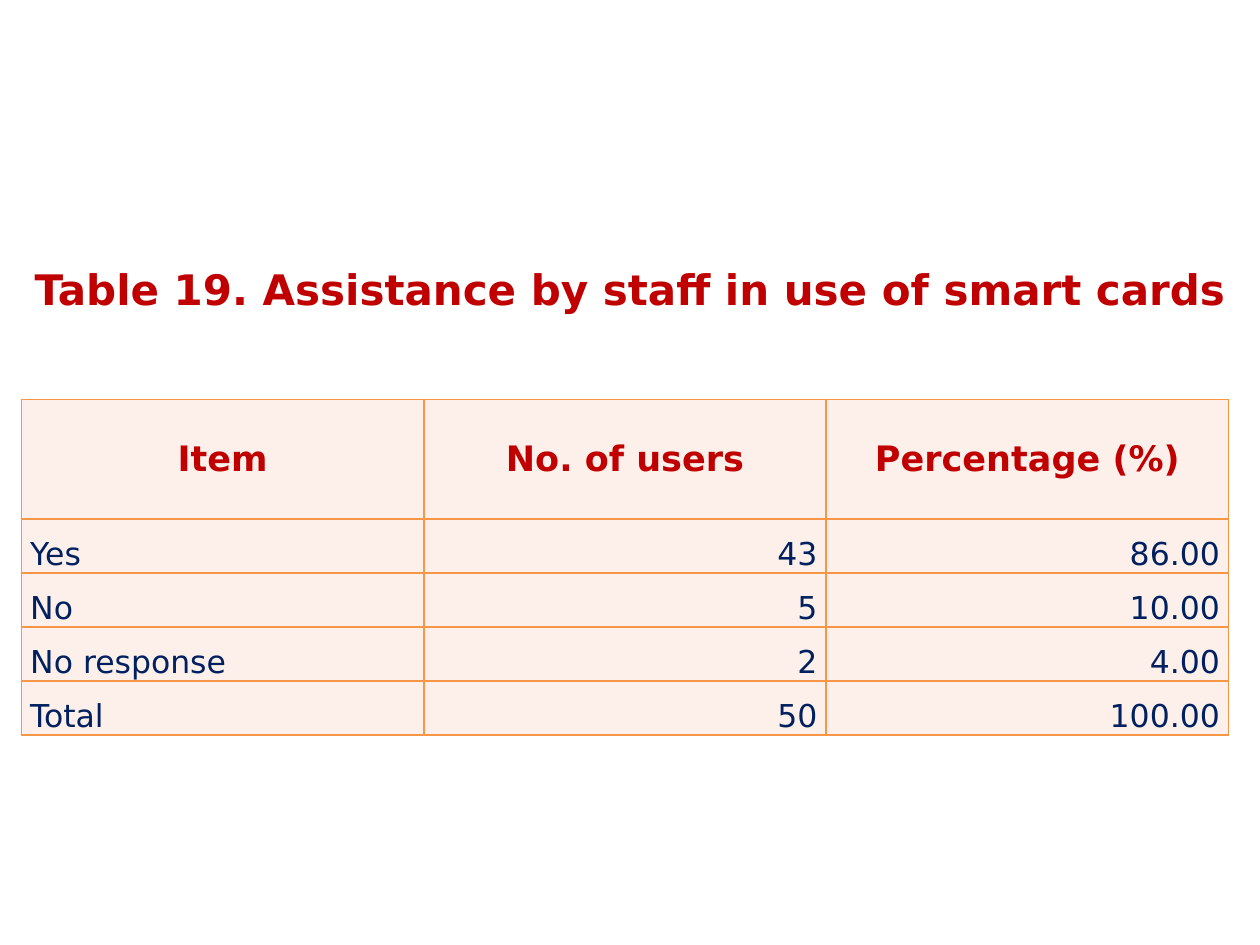
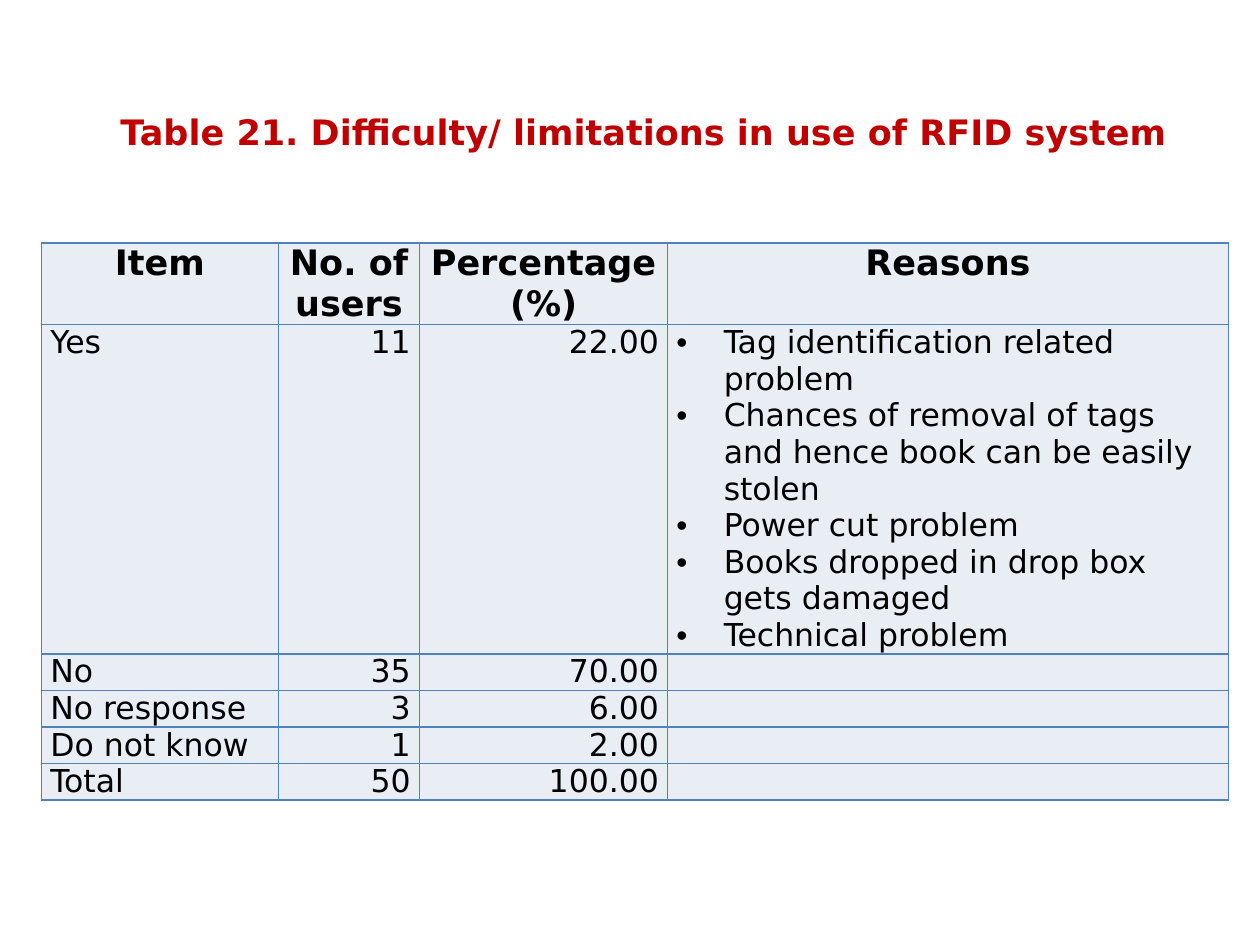
import pptx
import pptx.util
import pptx.dml.color
import pptx.enum.text
import lxml.etree
import pptx.oxml.ns

RGBColor = pptx.dml.color.RGBColor
Align = pptx.enum.text.PP_ALIGN
Anchor = pptx.enum.text.MSO_ANCHOR
Pt = pptx.util.Pt

RED = RGBColor(0xC0, 0x00, 0x00)
NAVY = RGBColor(0x00, 0x20, 0x60)
BLACK = RGBColor(0x00, 0x00, 0x00)
PEACH = RGBColor(0xFD, 0xEF, 0xE9)
ORANGE = RGBColor(0xF7, 0x96, 0x46)
MIST = RGBColor(0xE9, 0xED, 0xF4)
BLUE = RGBColor(0x4F, 0x81, 0xBD)

FONT = "DejaVu Sans"
COLS, ROWS = 100, 75
PAD = 0.7
HANG = 3.75


def apply(target, values):
    for name, value in values.items():
        setattr(target, name, value)


def add(parent, tag, **values):
    return lxml.etree.SubElement(parent, pptx.oxml.ns.qn(tag), **values)


class Deck:
    def __init__(self):
        self.file = pptx.Presentation()
        self.file.slide_width = pptx.util.Inches(10)
        self.file.slide_height = pptx.util.Inches(7.5)
        self.slide = None

    def x(self, cols):
        return round(self.file.slide_width * cols / COLS)

    def y(self, rows):
        return round(self.file.slide_height * rows / ROWS)

    def page(self):
        layout = self.file.slide_layouts[5]
        self.slide = self.file.slides.add_slide(layout)

    def label(self, para, text, size, color, bold, align):
        para.alignment = align
        run = para.add_run()
        run.text = text
        apply(run.font, {"name": FONT, "size": Pt(size), "bold": bold})
        run.font.color.rgb = color

    def title(self, text, left, top, width, height, size):
        shape = self.slide.shapes.title
        apply(shape, {"left": self.x(left), "top": self.y(top),
                      "width": self.x(width), "height": self.y(height)})
        frame = shape.text_frame
        apply(frame, {"word_wrap": False,
                      "auto_size": pptx.enum.text.MSO_AUTO_SIZE.NONE,
                      "vertical_anchor": Anchor.TOP,
                      "margin_top": self.y(PAD), "margin_bottom": 0})
        self.label(frame.paragraphs[0], text, size, RED, True, Align.CENTER)

    def bullet(self, para):
        props = para._p.get_or_add_pPr()
        props.set("marL", str(self.x(HANG)))
        props.set("indent", str(-self.x(HANG)))
        add(props, "a:buFont", typeface="Arial")
        add(props, "a:buChar", char="•")

    def border(self, cell, color):
        props = cell._tc.get_or_add_tcPr()
        for spot, side in enumerate(("a:lnL", "a:lnR", "a:lnT", "a:lnB")):
            line = lxml.etree.Element(pptx.oxml.ns.qn(side), w=str(Pt(1)))
            add(add(line, "a:solidFill"), "a:srgbClr", val=str(color))
            props.insert(spot, line)

    def cell(self, cell, value, fill, edge, anchor, **style):
        apply(cell, {"margin_left": self.x(PAD), "margin_right": self.x(PAD),
                     "margin_top": 0, "margin_bottom": 0,
                     "vertical_anchor": anchor})
        cell.fill.solid()
        cell.fill.fore_color.rgb = fill
        self.border(cell, edge)
        frame = cell.text_frame
        if not value:
            add(frame.paragraphs[0]._p, "a:endParaRPr", sz="1600")
            return
        items = value if isinstance(value, list) else [value]
        for spot, text in enumerate(items):
            para = frame.add_paragraph() if spot else frame.paragraphs[0]
            if isinstance(value, list):
                self.bullet(para)
            self.label(para, text, **style)

    def table(self, data, left, top, widths, heights, fill, edge,
              inks, anchors):
        shape = self.slide.shapes.add_table(
            len(data), len(widths), self.x(left), self.y(top),
            self.x(sum(widths)), self.y(sum(heights)))
        grid = shape.table
        apply(grid, {"first_row": False, "horz_banding": False})
        for col, width in zip(grid.columns, widths):
            col.width = self.x(width)
        for row, height in zip(grid.rows, heights):
            row.height = self.y(height)
        for r, line in enumerate(data):
            for c, value in enumerate(line):
                head = r == 0
                align = Align.RIGHT if c in (1, 2) else Align.LEFT
                self.cell(grid.cell(r, c), value, fill, edge,
                          anchors[0 if head else 1],
                          size=20 if head else 18,
                          color=inks[0 if head else 1], bold=head,
                          align=Align.CENTER if head else align)


def main():
    deck = Deck()

    deck.page()
    deck.title("Table 19. Assistance by staff in use of smart cards",
               1.4, 20.2, 97.2, 9.1, 24)
    deck.table([
        ["Item", "No. of users", "Percentage (%)"],
        ["Yes", "43", "86.00"],
        ["No", "5", "10.00"],
        ["No response", "2", "4.00"],
        ["Total", "50", "100.00"],
    ], 1.7, 31.7, [31.94] * 3, [9.5] + [4.29] * 4, PEACH, ORANGE,
        (RED, NAVY), (Anchor.MIDDLE, Anchor.BOTTOM))

    deck.page()
    deck.title("Table 21. Difficulty/ limitations in use of RFID system",
               7.5, 8.1, 87.2, 7.7, 20)
    reasons = [
        "Tag identification related problem",
        "Chances of removal of tags and hence book can be easily stolen",
        "Power cut problem",
        "Books dropped in drop box gets damaged",
        "Technical problem",
    ]
    deck.table([
        ["Item", "No. of users", "Percentage (%)", "Reasons"],
        ["Yes", "11", "22.00", reasons],
        ["No", "35", "70.00", ""],
        ["No response", "3", "6.00", ""],
        ["Do not know", "1", "2.00", ""],
        ["Total", "50", "100.00", ""],
    ], 3.3, 19.3, [18.8, 11.2, 19.7, 44.5], [6.45, 26.1] + [2.9] * 4,
        MIST, BLUE, (BLACK, BLACK), (Anchor.TOP, Anchor.TOP))

    deck.file.save("out.pptx")


if __name__ == "__main__":
    main()
